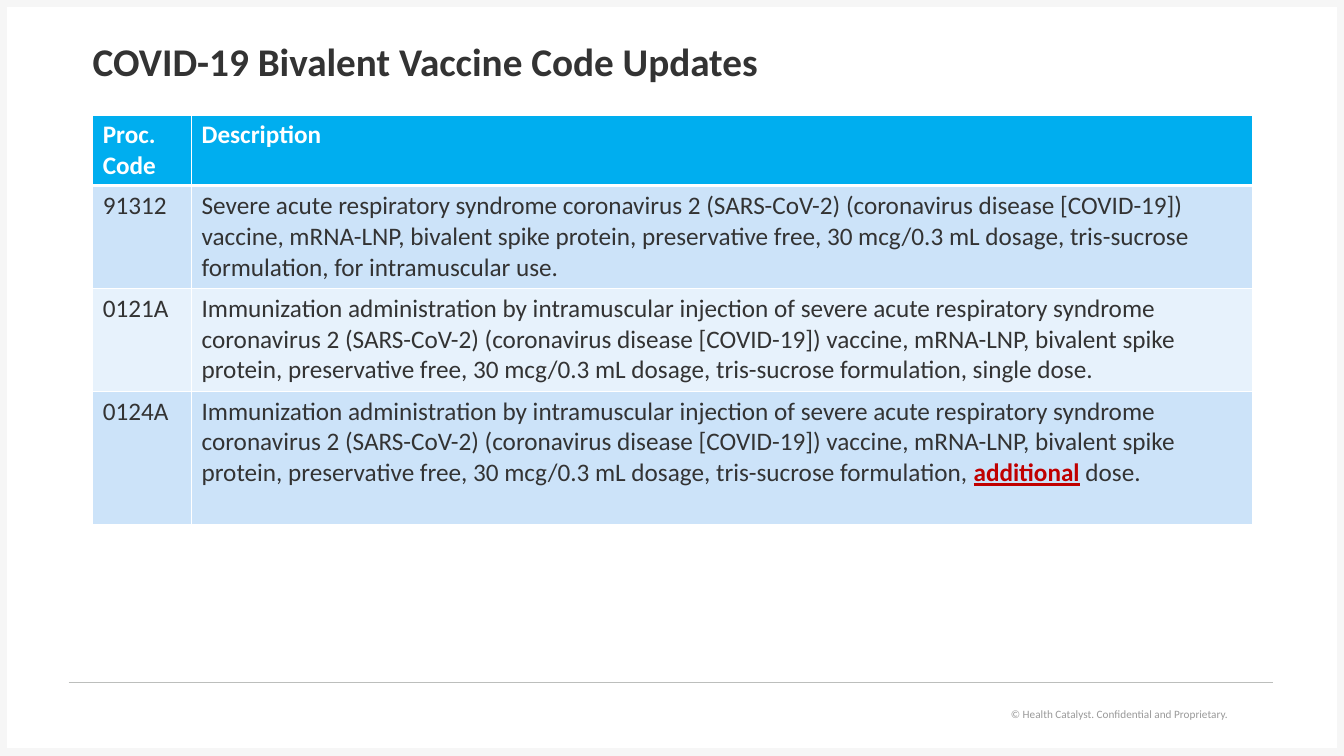
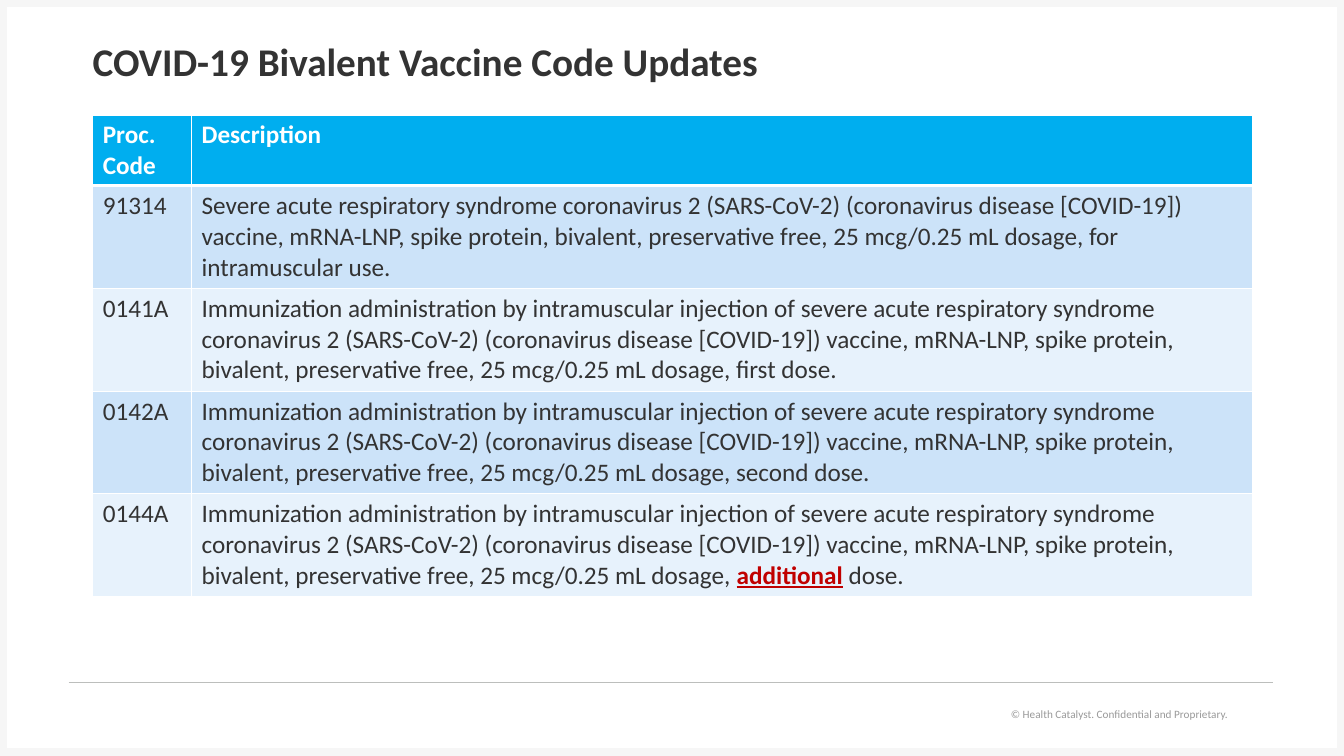
import pptx
import pptx.dml.color
import pptx.enum.shapes
import pptx.enum.text
import pptx.oxml
import pptx.oxml.ns
import pptx.util
from pptx.util import Inches

FONT = "Calibri"
COLORS = {
    "frame": "F6F6F6",
    "rule": "BCBEBC",
    "footer": "999999",
    "text": "333333",
    "white": "FFFFFF",
    "header": "00AEEF",
    "band_dark": "CCE3F9",
    "band_light": "E7F2FC",
    "emphasis": "C00000",
}

TITLE = "COVID-19 Bivalent Vaccine Code Updates"
FOOTER = "© Health Catalyst. Confidential and Proprietary."
HEADINGS = ("Proc. Code", "Description")
COLUMN_WIDTHS = (0.98, 10.52)
LEFT, WIDTH = 0.92, sum(COLUMN_WIDTHS)
HEADER_HEIGHT, ROW_HEIGHT, TALL_ROW_HEIGHT = 0.7, 1.02, 1.32

# Wording that the code descriptions share
VIRUS = ("evere acute respiratory syndrome coronavirus 2 (SARS-CoV-2) "
         "(coronavirus disease [COVID-19]) vaccine, mRNA-LNP, ")
PRODUCT = "S" + VIRUS
ADMINISTRATION = "Immunization administration by intramuscular injection of s" + VIRUS
DOSE_30 = ("bivalent spike protein, preservative free, 30 mcg/0.3 mL dosage, "
           "tris-sucrose formulation, ")
DOSE_25 = "spike protein, bivalent, preservative free, 25 mcg/0.25 mL dosage, "
USE = "for intramuscular use."

# Each row: code, description, and an emphasised word with its ending if any
ROWS_30 = [
    ("91312", PRODUCT + DOSE_30 + USE),
    ("0121A", ADMINISTRATION + DOSE_30 + "single dose."),
    ("0124A", ADMINISTRATION + DOSE_30, "additional", " dose."),
]
ROWS_25 = [
    ("91314", PRODUCT + DOSE_25 + USE),
    ("0141A", ADMINISTRATION + DOSE_25 + "first dose."),
    ("0142A", ADMINISTRATION + DOSE_25 + "second dose."),
    ("0144A", ADMINISTRATION + DOSE_25, "additional", " dose."),
]


def rgb(name):
    return pptx.dml.color.RGBColor.from_string(COLORS[name])


def add_span(para, text, size, color="text", bold=False, underline=False):
    span = para.add_run()
    span.text = text
    span.font.name = FONT
    span.font.size = pptx.util.Pt(size)
    span.font.bold = bold
    span.font.underline = underline
    span.font.color.rgb = rgb(color)


def add_frame(page):
    frame = page.shapes.add_shape(
        pptx.enum.shapes.MSO_SHAPE.RECTANGLE,
        Inches(0.02), Inches(0.02), Inches(13.29), Inches(7.46))
    frame.shadow.inherit = False
    frame.fill.background()
    frame.line.color.rgb = rgb("frame")
    frame.line.width = pptx.util.Pt(7.75)


def add_footer(page):
    box = page.shapes.add_textbox(Inches(9.83), Inches(6.97), Inches(2.45), Inches(0.24))
    box.text_frame.word_wrap = True
    para = box.text_frame.paragraphs[0]
    para.alignment = pptx.enum.text.PP_ALIGN.RIGHT
    add_span(para, FOOTER, 8, "footer")

    rule = page.shapes.add_connector(
        pptx.enum.shapes.MSO_CONNECTOR.STRAIGHT,
        Inches(0.68), Inches(6.77), Inches(12.63), Inches(6.77))
    rule.line.color.rgb = rgb("rule")
    rule.line.width = pptx.util.Pt(0.75)
    rule._element.spPr.append(pptx.oxml.parse_xml(
        f'<a:effectLst {pptx.oxml.ns.nsdecls("a")}/>'))


def add_title(page):
    box = page.shapes.add_textbox(Inches(LEFT), Inches(0.4), Inches(WIDTH), Inches(0.46))
    box.text_frame.word_wrap = True
    box.text_frame.margin_left = 0
    box.text_frame.vertical_anchor = pptx.enum.text.MSO_ANCHOR.MIDDLE
    para = box.text_frame.paragraphs[0]
    para.line_spacing = 0.9
    add_span(para, TITLE, 28, bold=True)


def style_cell(cell, fill, top=1, bottom=1):
    # Borders precede the fill in the cell properties
    properties = cell._tc.get_or_add_tcPr()
    for side, points in (("L", 1), ("R", 1), ("T", top), ("B", bottom)):
        properties.append(pptx.oxml.parse_xml(
            f'<a:ln{side} {pptx.oxml.ns.nsdecls("a")} w="{pptx.util.Pt(points)}">'
            f'<a:solidFill><a:srgbClr val="{COLORS["white"]}"/></a:solidFill>'
            f'</a:ln{side}>'))
    cell.fill.solid()
    cell.fill.fore_color.rgb = rgb(fill)


def add_code_table(page, rows, heights):
    table = page.shapes.add_table(
        len(rows) + 1, len(HEADINGS), Inches(LEFT), Inches(1.14),
        Inches(WIDTH), Inches(HEADER_HEIGHT + sum(heights))).table
    for column, width in zip(table.columns, COLUMN_WIDTHS):
        column.width = Inches(width)
    for row, height in zip(table.rows, [HEADER_HEIGHT, *heights]):
        row.height = Inches(height)

    # Header row
    for cell, heading in zip(table.rows[0].cells, HEADINGS):
        style_cell(cell, "header", bottom=3)
        add_span(cell.text_frame.paragraphs[0], heading, 18, "white", bold=True)

    # Banded code rows
    for index, (code, description, *ending) in enumerate(rows, 1):
        fill = "band_dark" if index % 2 else "band_light"
        cells = table.rows[index].cells
        for cell, text in zip(cells, (code, description)):
            style_cell(cell, fill, top=3 if index == 1 else 1)
            add_span(cell.text_frame.paragraphs[0], text, 18)
        if ending:
            word, rest = ending
            para = cells[1].text_frame.paragraphs[0]
            add_span(para, word, 18, "emphasis", bold=True, underline=True)
            add_span(para, rest, 18)


def add_page(deck, rows, heights):
    page = deck.slides.add_slide(deck.slide_layouts[6])
    add_frame(page)
    add_footer(page)
    add_title(page)
    add_code_table(page, rows, heights)


def main():
    deck = pptx.Presentation()
    deck.slide_width, deck.slide_height = Inches(13.33), Inches(7.5)
    add_page(deck, ROWS_30, [ROW_HEIGHT, ROW_HEIGHT, TALL_ROW_HEIGHT])
    add_page(deck, ROWS_25, [ROW_HEIGHT] * len(ROWS_25))
    deck.save("out.pptx")


if __name__ == "__main__":
    main()
